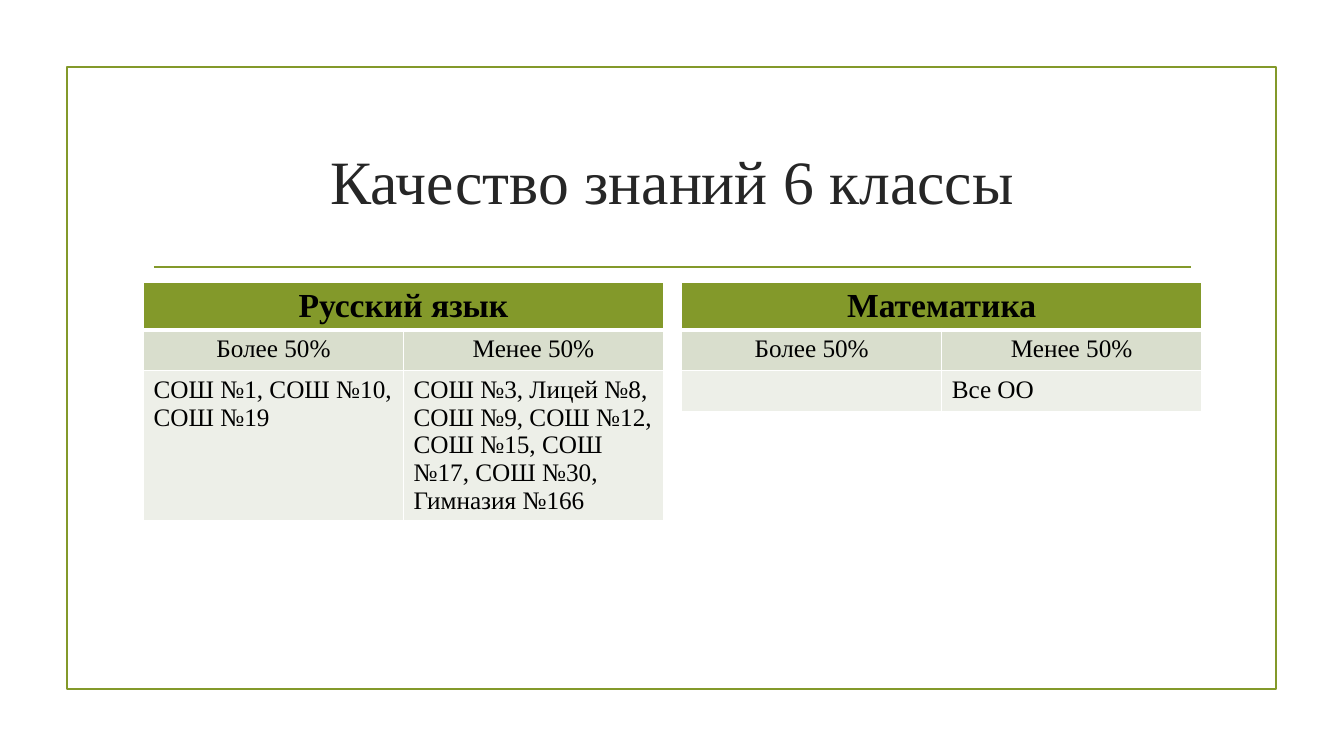
from lxml.etree import SubElement
from pptx import Presentation
from pptx.dml.color import RGBColor
from pptx.enum.shapes import MSO_CONNECTOR as Connector, MSO_SHAPE as Shape
from pptx.enum.text import MSO_ANCHOR as Anchor, PP_ALIGN as Align
from pptx.oxml.ns import qn
from pptx.util import Pt

TITLE_ONLY = 5
HEADINGS = ["Более 50%", "Менее 50%"]
SUBJECTS = [
    ("Русский язык", [
        "СОШ №1, СОШ №10, СОШ №19",
        "СОШ №3, Лицей №8, СОШ №9, СОШ №12, СОШ №15, СОШ №17, СОШ №30, Гимназия №166",
    ]),
    ("Математика", ["", "Все ОО"]),
]


def color(value):
    return RGBColor.from_string(value)


class SlideBuilder:
    font = "Times New Roman"
    green = "83992A"
    row_fills = [green, "D9DECD", "EDEFE8"]
    line_width = 1.25
    row_height = 29.2

    def __init__(self, presentation):
        layout = presentation.slide_layouts[TITLE_ONLY]
        self.slide = presentation.slides.add_slide(layout)

    def style(self, paragraph, size, fill, align, bold=False):
        paragraph.alignment = align
        font = paragraph.font
        font.name, font.size, font.bold = self.font, Pt(size), bold
        font.color.rgb = color(fill)

    def frame(self, left, top, width, height):
        shape = self.slide.shapes.add_shape(
            Shape.RECTANGLE, Pt(left), Pt(top), Pt(width), Pt(height))
        shape.shadow.inherit = False
        shape.fill.background()
        shape.line.color.rgb = color(self.green)
        shape.line.width = Pt(self.line_width)

    def rule(self, left, right, top):
        connector = self.slide.shapes.add_connector(
            Connector.STRAIGHT, Pt(left), Pt(top), Pt(right), Pt(top))
        connector.line.color.rgb = color(self.green)
        connector.line.width = Pt(self.line_width)
        SubElement(connector._element.spPr, qn("a:effectLst"))

    def title(self, text, left, top, width, height):
        title = self.slide.shapes.title
        title.left, title.top = Pt(left), Pt(top)
        title.width, title.height = Pt(width), Pt(height)
        title.text_frame.text = text
        title.text_frame.vertical_anchor = Anchor.MIDDLE
        self.style(title.text_frame.paragraphs[0], 44, "262626", Align.CENTER)

    def borders(self, cell, top, bottom):
        properties = cell._tc.get_or_add_tcPr()
        for side, width in (("L", 1), ("R", 1), ("T", top), ("B", bottom)):
            line = SubElement(properties, qn(f"a:ln{side}"), w=str(Pt(width)))
            fill = SubElement(line, qn("a:solidFill"))
            SubElement(fill, qn("a:srgbClr"), val="FFFFFF")

    def table(self, subject, schools, left, top, width):
        rows = [[subject, ""], HEADINGS, schools]
        table = self.slide.shapes.add_table(
            len(rows), len(HEADINGS), Pt(left), Pt(top), Pt(width),
            Pt(self.row_height * len(rows))).table
        for row_index, texts in enumerate(rows):
            header = row_index == 0
            for column_index, text in enumerate(texts):
                cell = table.cell(row_index, column_index)
                self.borders(cell, 3 if row_index == 1 else 1, 3 if header else 1)
                cell.fill.solid()
                cell.fill.fore_color.rgb = color(self.row_fills[row_index])
                cell.text = text
                self.style(cell.text_frame.paragraphs[0], 24 if header else 18, "000000",
                           Align.LEFT if row_index == 2 else Align.CENTER, header)
        table.cell(0, 0).merge(table.cell(0, 1))


def main():
    presentation = Presentation()
    presentation.slide_width, presentation.slide_height = Pt(960), Pt(540)
    builder = SlideBuilder(presentation)
    builder.frame(47.7, 48, 864, 444)
    builder.rule(110, 850.5, 190.6)
    builder.title("Качество знаний 6 классы", 102.2, 77, 756, 103)
    for index, (subject, schools) in enumerate(SUBJECTS):
        builder.table(subject, schools, 102.5 + index * 384.4, 201.8, 371.5)
    presentation.save("out.pptx")


if __name__ == "__main__":
    main()
